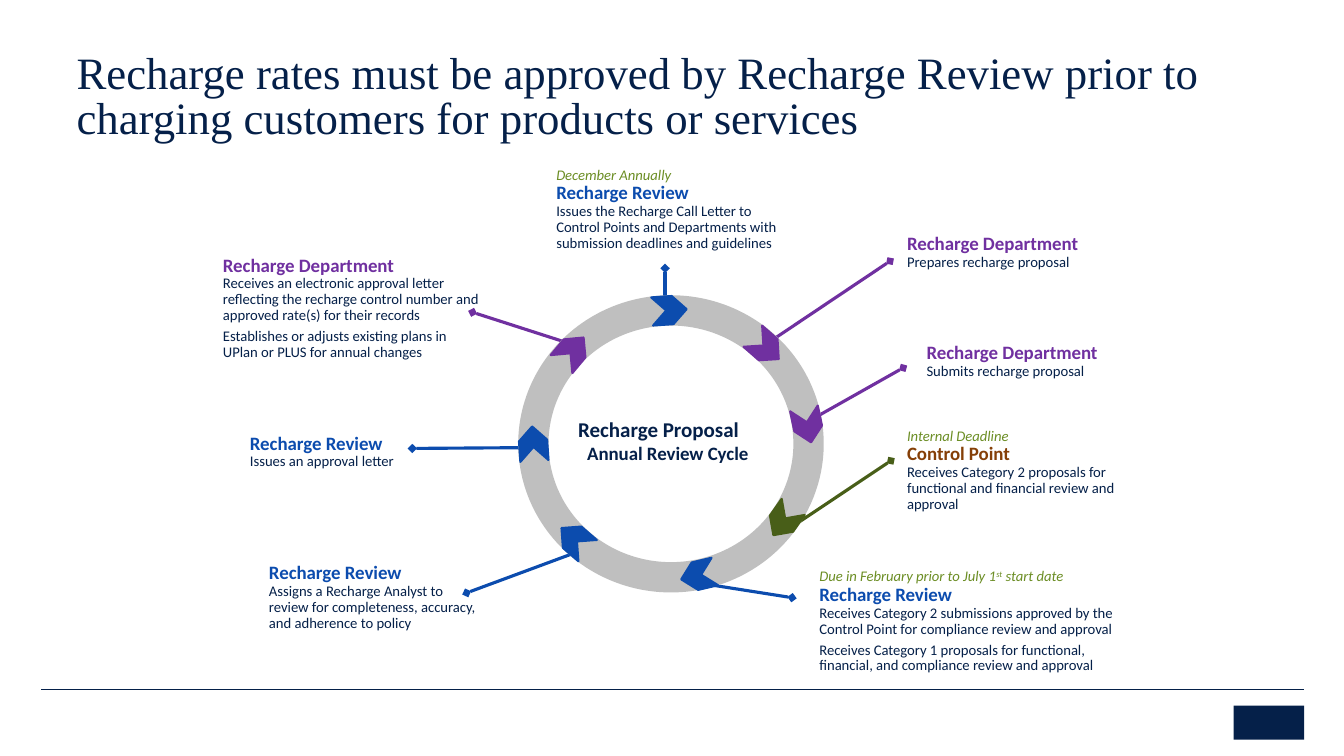
from collections import namedtuple

from lxml import etree
from pptx import Presentation
from pptx import util as u
from pptx.dml.color import RGBColor
from pptx.enum import shapes, text
from pptx.oxml.ns import qn

NAVY = RGBColor(0x05, 0x20, 0x49)
BLUE = RGBColor(0x0C, 0x4C, 0xAE)
PURPLE = RGBColor(0x70, 0x30, 0xA0)
OLIVE = RGBColor(0x48, 0x5E, 0x18)
LEAF = RGBColor(0x6C, 0x8E, 0x25)
BROWN = RGBColor(0x85, 0x3F, 0x07)
GREY = RGBColor(0xBF, 0xBF, 0xBF)

# Lengths are centimetres; chevron is (centre x, centre y, rotation)
Stage = namedtuple("Stage", "color chevron start end box inset date owner tasks owner_color",
                   defaults=[None])

STAGES = [
    Stage(BLUE, (16.87, 7.82, 356.2), (16.76, 7.49), (16.76, 6.76),
          (13.87, 3.96, 6.07, 2.64), 0.15, "December Annually", "Recharge Review",
          ["Issues the Recharge Call Letter to Control Points and Departments "
           "with submission deadlines and guidelines"]),
    Stage(PURPLE, (19.3, 8.76, 41.4), (19.25, 8.71), (22.43, 6.58),
          (22.73, 5.46, 4.8, 1.8), 0.13, "", "Recharge Department",
          ["Prepares recharge proposal"]),
    Stage(PURPLE, (20.35, 10.72, 78.1), (20.65, 10.46), (22.76, 9.27),
          (23.22, 8.2, 4.88, 1.8), 0.13, "", "Recharge Department",
          ["Submits recharge proposal"]),
    Stage(OLIVE, (19.74, 13.13, 125), (19.86, 13.34), (22.45, 11.61),
          (22.73, 10.64, 5.72, 2.44), 0.13, "Internal Deadline", "Control Point",
          ["Receives Category 2 proposals for functional and financial review and approval"],
          BROWN),
    Stage(BLUE, (17.59, 14.5, 166.8), (17.86, 14.73), (19.96, 15.06),
          (20.47, 13.94, 7.98, 3.45), 0.18,
          "Due in February prior to July 1^st^ start date", "Recharge Review",
          ["Receives Category 2 submissions approved by the Control Point "
           "for compliance review and approval",
           "Receives Category 1 proposals for functional, financial, "
           "and compliance review and approval"]),
    Stage(BLUE, (14.48, 13.59, 220.8), (14.38, 13.97), (11.76, 14.94),
          (6.65, 13.92, 5.54, 2.26), 0.13, "", "Recharge Review",
          ["Assigns a Recharge Analyst to review for completeness, accuracy, "
           "and adherence to policy"]),
    Stage(BLUE, (13.44, 11.18, 266.2), (13.21, 11.28), (10.39, 11.3),
          (6.17, 10.49, 4.32, 1.8), 0.13, "", "Recharge Review",
          ["Issues an approval letter"]),
    Stage(PURPLE, (14.43, 8.84, 309.7), (14.15, 8.59), (11.91, 7.87),
          (5.44, 6.22, 6.81, 3.1), 0.18, "", "Recharge Department",
          ["Receives an electronic approval letter reflecting the recharge control "
           "number and approved rate(s) for their records",
           "Establishes or adjusts existing plans in UPlan or PLUS for annual changes"]),
]


def write(box, words, size=10.5, color=NAVY, font="Calibri", bold=False, italic=False,
          spacing=0.9, after=0, align=text.PP_ALIGN.LEFT, indent=0):
    """Add one paragraph to a text box; words between ^ marks are superscript."""
    frame = box.text_frame
    para = frame.paragraphs[0]
    if para.runs:
        para = frame.add_paragraph()
    para.alignment = align
    para.line_spacing = spacing
    para.space_after = u.Pt(after)
    if indent:
        para._p.get_or_add_pPr().set("marL", str(u.Cm(indent)))
    for index, part in enumerate(words.split("^")):
        span = para.add_run()
        span.text = part
        span.font.name = font
        span.font.size = u.Pt(size)
        span.font.bold = bold
        span.font.italic = italic
        span.font.color.rgb = color
        if index % 2:
            span.font._element.set("baseline", "30000")


class Page:
    chevron_size = (0.87, 0.71)
    leader_width = 2.25

    def __init__(self, deck):
        self.shapes = deck.slides.add_slide(deck.slide_layouts[6]).shapes

    def text_box(self, place, inset=0.0, anchor=text.MSO_ANCHOR.MIDDLE):
        box = self.shapes.add_textbox(*map(u.Cm, place))
        frame = box.text_frame
        frame.word_wrap = True
        frame.vertical_anchor = anchor
        frame.margin_left = frame.margin_right = u.Cm(inset)
        frame.margin_top = frame.margin_bottom = u.Cm(inset)
        return box

    def line(self, start, end, color, width, diamond=False):
        line = self.shapes.add_connector(shapes.MSO_CONNECTOR.STRAIGHT,
                                         *map(u.Cm, start + end))
        line.line.color.rgb = color
        line.line.width = u.Pt(width)
        if diamond:
            etree.SubElement(line.line._get_or_add_ln(), qn("a:tailEnd"), type="diamond")
        etree.SubElement(line._element.spPr, qn("a:effectLst"))

    def shape(self, kind, place, color):
        shape = self.shapes.add_shape(kind, *map(u.Cm, place))
        shape.shadow.inherit = False
        shape.fill.solid()
        shape.fill.fore_color.rgb = color
        shape.line.fill.background()
        return shape

    def chevron(self, center_x, center_y, rotation, color):
        width, height = self.chevron_size
        place = (center_x - width / 2, center_y - height / 2, width, height)
        chevron = self.shape(shapes.MSO_SHAPE.CHEVRON, place, color)
        chevron.rotation = rotation
        chevron.line.color.rgb = color
        chevron.line.width = u.Pt(1.5)

    def stage_label(self, stage):
        box = self.text_box(stage.box, stage.inset)
        if stage.date:
            write(box, stage.date, color=LEAF, italic=True)
        write(box, stage.owner, size=13.5, color=stage.owner_color or stage.color, bold=True)
        for task in stage.tasks:
            write(box, task, after=3.7)


def main():
    deck = Presentation()
    deck.slide_width, deck.slide_height = u.Cm(33.87), u.Cm(19.05)
    page = Page(deck)

    page.line((1.04, 17.37), (32.87, 17.37), NAVY, 0.25)
    page.shape(shapes.MSO_SHAPE.RECTANGLE, (31.09, 17.78, 1.78, 0.86), NAVY)
    title = page.text_box((1.68, 1.17, 29.97, 2.62), 0.25)
    write(title, "Recharge rates must be approved by Recharge Review prior to "
          "charging customers for products or services",
          size=32, font="Times New Roman", spacing=0.85)

    for stage in STAGES:
        page.line(stage.start, stage.end, stage.color, page.leader_width, diamond=True)
    for stage in STAGES:
        page.stage_label(stage)

    center = page.text_box((13.92, 10.49, 5.82, 1.57), anchor=text.MSO_ANCHOR.TOP)
    write(center, "Recharge Proposal", size=15, bold=True, spacing=1, indent=0.65)
    write(center, "Annual Review Cycle", size=13.5, bold=True, spacing=1,
          align=text.PP_ALIGN.CENTER)

    ring = page.shape(shapes.MSO_SHAPE.DONUT, (13.06, 7.44, 7.7, 7.49), GREY)
    ring.adjustments[0] = 0.102
    for stage in STAGES:
        page.chevron(*stage.chevron, stage.color)

    deck.save("out.pptx")


if __name__ == "__main__":
    main()
